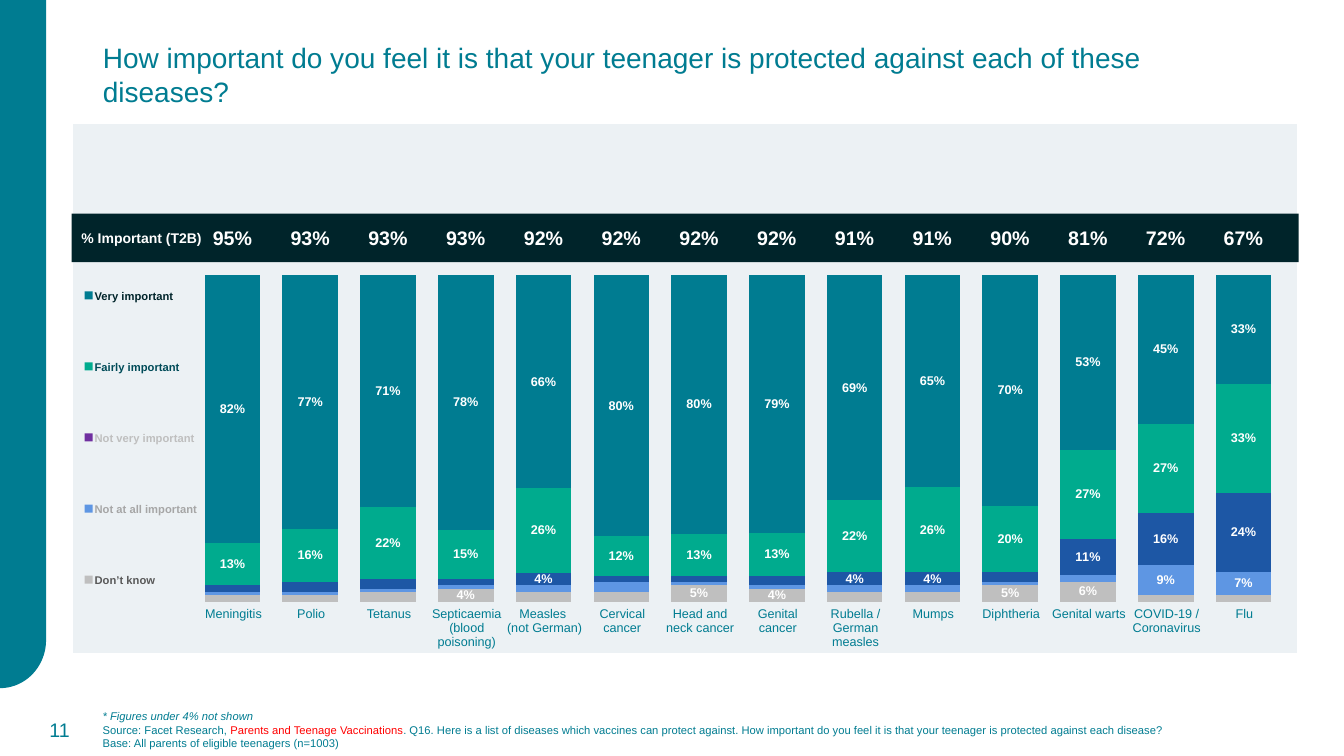
from math import cos, pi, sin

from lxml import etree
from pptx import Presentation
from pptx.chart.data import CategoryChartData
from pptx.dml.color import RGBColor
from pptx.enum.chart import XL_CHART_TYPE, XL_LABEL_POSITION
from pptx.enum.shapes import MSO_SHAPE
from pptx.enum.text import MSO_ANCHOR, PP_ALIGN
from pptx.oxml.ns import qn
from pptx.util import Inches, Pt

TEAL, DARK, WHITE, PANEL = "007C91", "00242A", "FFFFFF", "ECF1F4"
TITLE = ("How important do you feel it is that your teenager is protected "
         "against each of these diseases?")
FOOTNOTE = [
    [("* Figures under 4% not shown", TEAL, True)],
    [("Source: Facet Research, ", TEAL, False),
     ("Parents and Teenage Vaccinations", "FF0000", False),
     (". Q16. Here is a list of diseases which vaccines can protect against. "
      "How important do you feel it is that your teenager is protected "
      "against each disease?", TEAL, False)],
    [("Base: All parents of eligible teenagers (n=1003)", TEAL, False)],
]
DISEASES = [
    "Meningitis", "Polio", "Tetanus", "Septicaemia (blood poisoning)",
    "Measles \n(not German)", "Cervical cancer", "Head and neck cancer",
    "Genital cancer", "Rubella / German measles", "Mumps", "Diphtheria",
    "Genital warts", "COVID-19 / Coronavirus", "Flu",
]
IMPORTANT = [95, 93, 93, 93, 92, 92, 92, 92, 91, 91, 90, 81, 72, 67]
# answer, bar colour, legend marker colour, legend text colour, percentages
ANSWERS = [
    ("Very important", TEAL, TEAL, DARK,
     [82, 77, 71, 78, 66, 80, 80, 79, 69, 65, 70, 53, 45, 33]),
    ("Fairly important", "00AB8E", "00AB8E", "004B58",
     [13, 16, 22, 15, 26, 12, 13, 13, 22, 26, 20, 27, 27, 33]),
    ("Not very important", "1D57A5", "7030A0", "BFBFBF",
     [2, 3, 3, 2, 4, 2, 2, 3, 4, 4, 3, 11, 16, 24]),
    ("Not at all important", "5E96E3", "5E96E3", "A6A6A6",
     [1, 1, 1, 1, 2, 3, 1, 1, 2, 2, 1, 2, 9, 7]),
    ("Don’t know", "BFBFBF", "BFBFBF", "595959",
     [2, 2, 3, 4, 3, 3, 5, 4, 3, 3, 5, 6, 2, 2]),
]
MIN_LABEL = 4
GRID_X, GRID_W = 1.92, 10.8
NO_STYLE = "{2D5ABB26-0587-4C30-8999-92F81FD0307C}"


def rgb(color):
    return RGBColor.from_string(color)


def box(at):
    return [Inches(v) for v in at]


def set_font(font, size, color, bold=False, italic=False):
    font.name, font.size, font.bold, font.italic = "Arial", Pt(size), bold, italic
    font.color.rgb = rgb(color)


def add_run(p, text, *style):
    r = p.add_run()
    r.text = text
    set_font(r.font, *style)


def paint(sp, fill, line=None, width=1):
    sp.shadow.inherit = False
    sp.fill.solid()
    sp.fill.fore_color.rgb = rgb(fill)
    if line:
        sp.line.color.rgb = rgb(line)
        sp.line.width = Pt(width)
    else:
        sp.line.fill.background()


def add_rect(s, at, fill, line=None, width=1):
    paint(s.shapes.add_shape(MSO_SHAPE.RECTANGLE, *box(at)), fill, line, width)


def add_text(s, at, text, *style, align=PP_ALIGN.LEFT):
    tf = s.shapes.add_textbox(*box(at)).text_frame
    tf.word_wrap = True
    tf.vertical_anchor = MSO_ANCHOR.MIDDLE
    tf.paragraphs[0].alignment = align
    if text:
        add_run(tf.paragraphs[0], text, *style)
    return tf


def add_side_bar(s, width=0.45, straight=6.35, radius=0.47, steps=24):
    """Bar down the left edge with its lower right corner rounded."""
    angles = [pi / 2 * i / steps for i in range(steps + 1)]
    outline = [(width, 0)] + [(width * cos(a), straight + radius * sin(a)) for a in angles]
    fb = s.shapes.build_freeform(0, 0)
    fb.add_line_segments([box(point) for point in outline], close=True)
    paint(fb.convert_to_shape(), TEAL, TEAL)


def add_row_table(s, at, texts, anchor, *style):
    """One-row table without fills or borders."""
    tbl = s.shapes.add_table(1, len(texts), *box(at)).table
    tbl.first_row = tbl.horz_banding = False
    tbl._tbl.tblPr.find(qn("a:tableStyleId")).text = NO_STYLE
    for cell, text in zip(tbl.iter_cells(), texts):
        cell.fill.background()
        cell.vertical_anchor = anchor
        cell.margin_left = cell.margin_right = cell.margin_top = Inches(0.01)
        cell.margin_bottom = 0
        tf = cell.text_frame
        for i, line in enumerate(text.split("\n")):
            p = tf.add_paragraph() if i else tf.paragraphs[0]
            p.alignment = PP_ALIGN.CENTER
            add_run(p, line, *style)


def add_bars(s):
    data = CategoryChartData(number_format="0%")
    data.categories = [d.replace(" \n", " ") for d in DISEASES]
    for name, _, _, _, values in ANSWERS:
        data.add_series(name, [v / 100 for v in values])
    chart = s.shapes.add_chart(XL_CHART_TYPE.COLUMN_STACKED_100,
                               *box((GRID_X, 2.59, GRID_W, 3.52)), data).chart
    chart.has_legend = chart.has_title = False
    set_font(chart.font, 9, WHITE, True)
    chart.value_axis.reverse_order = True
    chart.value_axis.has_major_gridlines = False
    chart.value_axis.maximum_scale = 1
    chart.value_axis.visible = chart.category_axis.visible = False

    plot = chart.plots[0]
    plot.gap_width, plot.overlap, plot.vary_by_categories = 40, 100, False
    for series, (_, color, _, _, values) in zip(plot.series, ANSWERS):
        series.format.fill.solid()
        series.format.fill.fore_color.rgb = rgb(color)
        series.data_labels.show_value = False
        for i, value in enumerate(values):
            if value >= MIN_LABEL:
                label = series.points[i].data_label
                set_font(label.font, 9, WHITE, True)
                label.position = XL_LABEL_POSITION.CENTER

    area = chart._chartSpace.chart.plotArea
    for old in area.findall(qn("c:layout")):
        area.remove(old)
    layout = etree.Element(qn("c:layout"))
    manual = etree.SubElement(layout, qn("c:manualLayout"))
    for tag, val in [("layoutTarget", "inner"), ("xMode", "edge"), ("yMode", "edge"),
                     ("x", "0"), ("y", "0.04"), ("w", "1"), ("h", "0.92")]:
        etree.SubElement(manual, qn("c:" + tag)).set("val", val)
    area.insert(0, layout)


def main():
    prs = Presentation()
    prs.slide_width, prs.slide_height = Inches(13.33), Inches(7.5)
    s = prs.slides.add_slide(prs.slide_layouts[5])
    add_side_bar(s)

    title = s.shapes.title
    title.left, title.top, title.width, title.height = box((0.92, 0.01, 11.5, 1.45))
    tf = title.text_frame
    tf.vertical_anchor = MSO_ANCHOR.MIDDLE
    tf.paragraphs[0].alignment = PP_ALIGN.LEFT
    add_run(tf.paragraphs[0], TITLE, 20, TEAL)

    tf = add_text(s, (0.92, 7.04, 11.6, 0.4), "")
    tf.margin_top = tf.margin_bottom = 0
    for i, line in enumerate(FOOTNOTE):
        p = tf.add_paragraph() if i else tf.paragraphs[0]
        for text, color, italic in line:
            add_run(p, text, 8, color, False, italic)
    add_text(s, (0.14, 7.04, 0.65, 0.4), "11", 14, TEAL, align=PP_ALIGN.RIGHT)

    add_rect(s, (0.71, 1.22, 12.17, 5.27), PANEL, WHITE, 1.5)
    add_rect(s, (0.71, 2.12, 12.17, 0.48), DARK)
    add_text(s, (0.71, 2.23, 1.46, 0.27), "% Important (T2B)", 10, WHITE, True)
    add_bars(s)
    add_row_table(s, (GRID_X, 2.16, GRID_W, 0.41), [f"{v}%" for v in IMPORTANT],
                  MSO_ANCHOR.MIDDLE, 14, WHITE, True)
    for i, (name, _, marker, color, _) in enumerate(ANSWERS):
        y = 2.81 + 0.705 * i
        add_rect(s, (0.84, y + 0.08, 0.08, 0.08), marker)
        add_text(s, (0.84, y, 1.3, 0.25), name, 8, color, True)
    add_row_table(s, (GRID_X + 0.01, 6.01, GRID_W, 0.46), DISEASES,
                  MSO_ANCHOR.TOP, 9, TEAL)
    prs.save("out.pptx")


if __name__ == "__main__":
    main()
